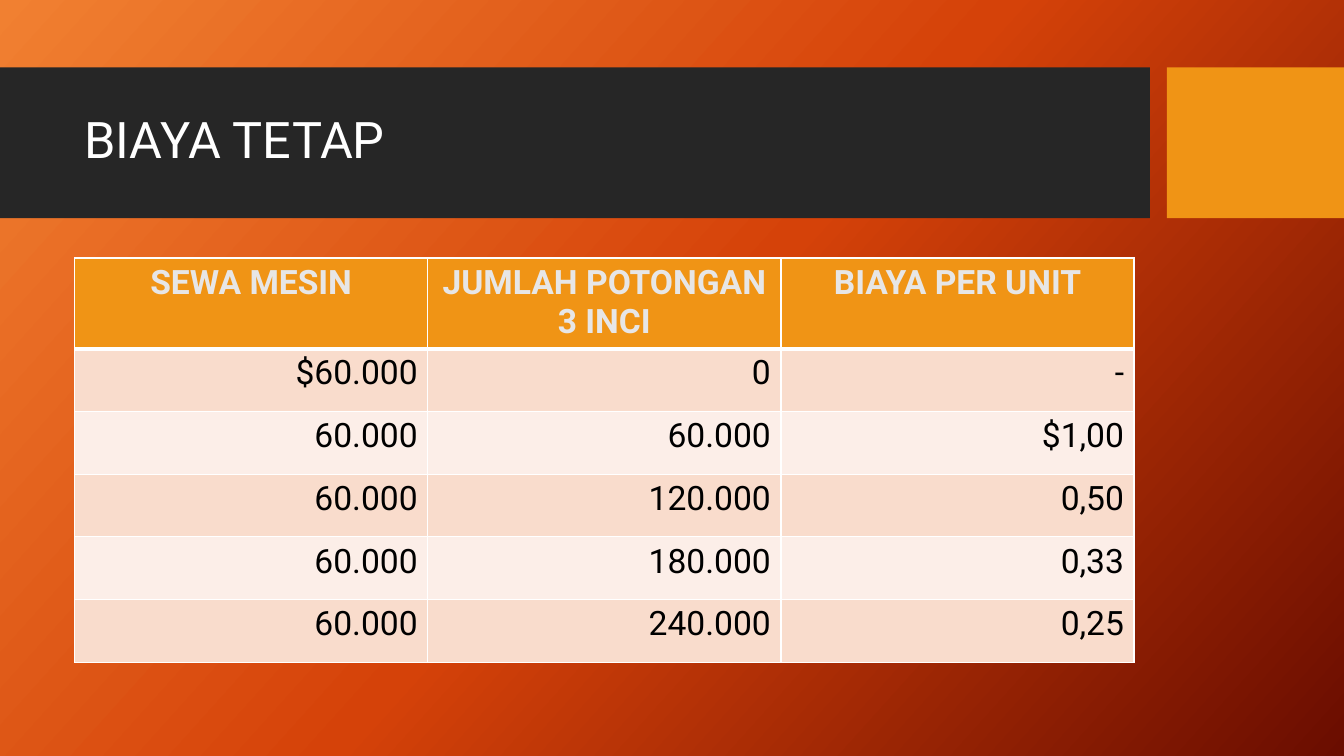
import copy

import pptx
import pptx.dml.color
import pptx.enum.shapes
import pptx.enum.text
import pptx.oxml.ns
import pptx.util
from lxml import etree
from pptx.dml.color import RGBColor
from pptx.enum.text import MSO_ANCHOR, PP_ALIGN
from pptx.util import Cm, Pt

FONT = "Roboto"
WHITE = RGBColor(0xFF, 0xFF, 0xFF)
BLACK = RGBColor(0x00, 0x00, 0x00)
CHARCOAL = RGBColor(0x26, 0x26, 0x26)
AMBER = RGBColor(0xF0, 0x94, 0x15)
LIGHT_GREY = RGBColor(0xE7, 0xE6, 0xE6)
PEACH = RGBColor(0xF9, 0xDC, 0xCC)
PALE_PEACH = RGBColor(0xFC, 0xEE, 0xE8)
GRADIENT = [
    (0, RGBColor(0xF1, 0x80, 0x31)),
    (0.5, RGBColor(0xD5, 0x42, 0x09)),
    (1, RGBColor(0x6A, 0x0D, 0x00)),
]
ROWS = [
    ("SEWA MESIN", "JUMLAH POTONGAN 3 INCI", "BIAYA PER UNIT"),
    ("$60.000", "0", "-"),
    ("60.000", "60.000", "$1,00"),
    ("60.000", "120.000", "0,50"),
    ("60.000", "180.000", "0,33"),
    ("60.000", "240.000", "0,25"),
]


def add_run(p, text, size, color, bold=False):
    r = p.add_run()
    r.text = text
    r.font.name = FONT
    r.font.size = Pt(size)
    r.font.bold = bold
    r.font.color.rgb = color


def add_border(cell, side, width):
    tcPr = cell._tc.get_or_add_tcPr()
    ln = etree.SubElement(tcPr, pptx.oxml.ns.qn(f"a:{side}"), w=str(Pt(width)))
    fill = etree.SubElement(ln, pptx.oxml.ns.qn("a:solidFill"))
    etree.SubElement(fill, pptx.oxml.ns.qn("a:srgbClr"), val=str(WHITE))


prs = pptx.Presentation()
prs.slide_width, prs.slide_height = Cm(33.87), Cm(19.05)
s = prs.slides.add_slide(prs.slide_layouts[6])

# Background gradient with a third stop
fill = s.background.fill
fill.gradient()
fill.gradient_angle = 360 - 42
stops = s.element.xpath(".//a:gsLst")[0]
stops.append(copy.deepcopy(stops[0]))
for stop, (position, color) in zip(fill.gradient_stops, GRADIENT):
    stop.position = position
    stop.color.rgb = color

# Title band and accent block
for left, width, color in [(0, 28.98, CHARCOAL), (29.41, 4.46, AMBER)]:
    sp = s.shapes.add_shape(pptx.enum.shapes.MSO_SHAPE.RECTANGLE,
                            Cm(left), Cm(1.7), Cm(width), Cm(3.8))
    sp.shadow.inherit = False
    sp.fill.solid()
    sp.fill.fore_color.rgb = color
    sp.line.fill.background()

# Title
tf = s.shapes.add_textbox(Cm(1.88), Cm(2.08), Cm(26.7), Cm(3)).text_frame
tf.word_wrap = True
tf.vertical_anchor = MSO_ANCHOR.MIDDLE
p = tf.paragraphs[0]
p.line_spacing = 0.9
add_run(p, "BIAYA TETAP", 36, WHITE)

# Fixed cost table
table = s.shapes.add_table(len(ROWS), len(ROWS[0]), Cm(1.88), Cm(6.5),
                           Cm(26.7), Cm(10.16)).table
for column in table.columns:
    column.width = Cm(8.9)
for i, values in enumerate(ROWS):
    header = i == 0
    table.rows[i].height = Cm(2.26 if header else 1.58)
    for j, text in enumerate(values):
        cell = table.cell(i, j)
        add_border(cell, "lnL", 1)
        add_border(cell, "lnR", 1)
        add_border(cell, "lnT", 3 if i == 1 else 1)
        add_border(cell, "lnB", 3 if header else 1)
        cell.fill.solid()
        cell.fill.fore_color.rgb = AMBER if header else PEACH if i % 2 else PALE_PEACH
        p = cell.text_frame.paragraphs[0]
        p.alignment = PP_ALIGN.CENTER if header else PP_ALIGN.RIGHT
        add_run(p, text, 24, LIGHT_GREY if header else BLACK, header)

prs.save("out.pptx")
